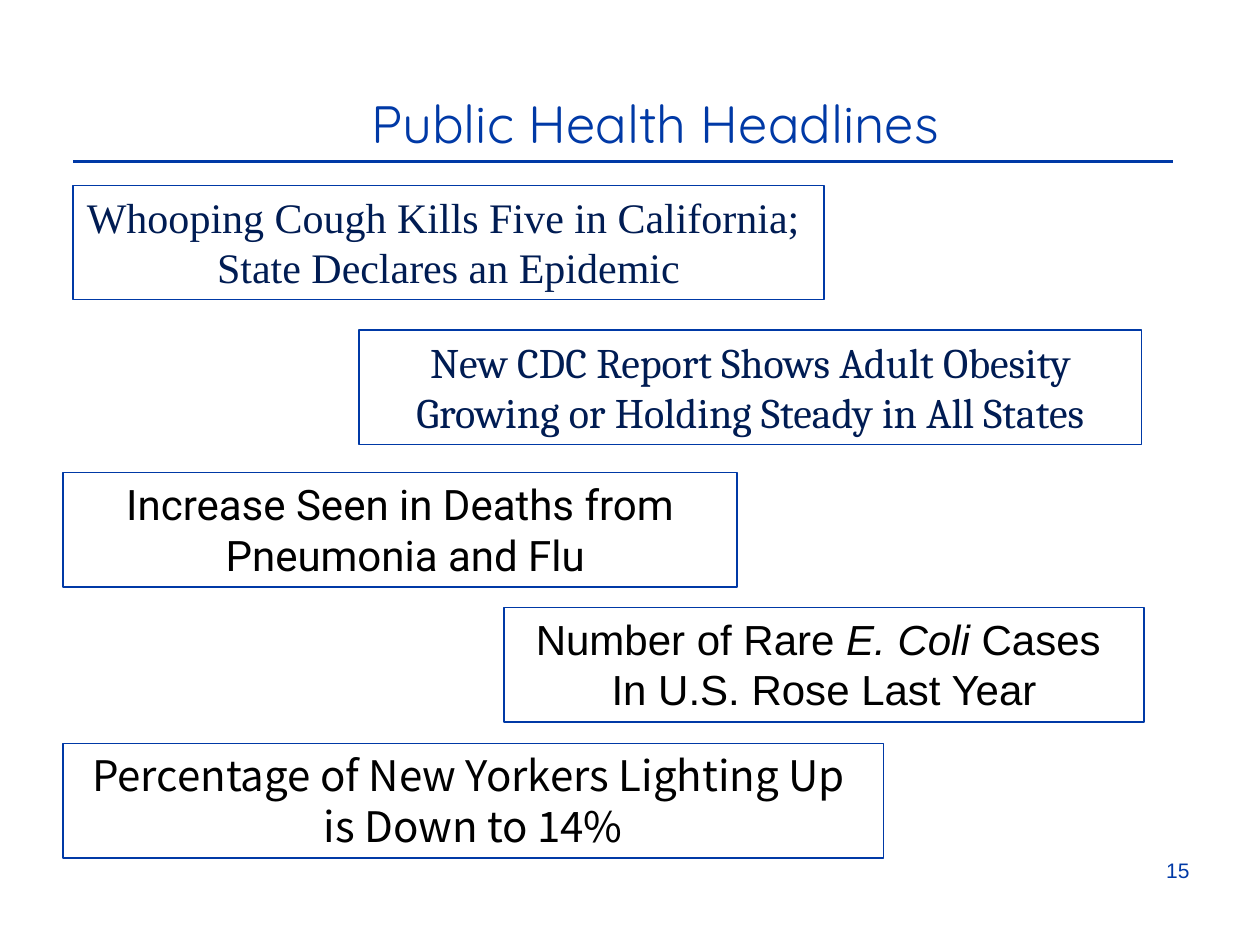
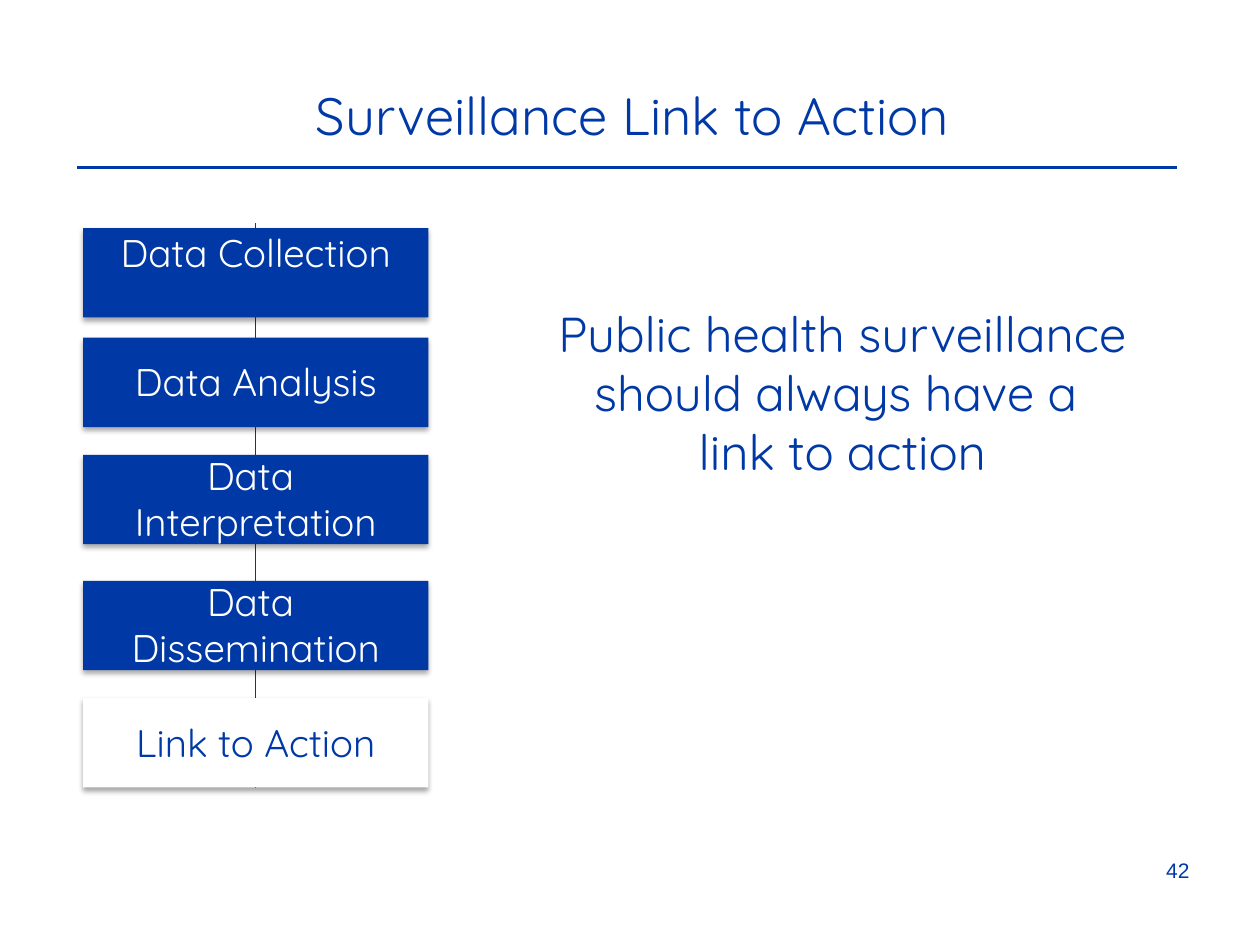
from dataclasses import dataclass

from lxml.etree import SubElement
from pptx import Presentation
from pptx.dml.color import RGBColor
from pptx.enum.shapes import MSO_CONNECTOR, MSO_SHAPE
from pptx.enum.text import MSO_ANCHOR, MSO_AUTO_SIZE, PP_ALIGN
from pptx.oxml.ns import qn
from pptx.util import Emu, Pt

PX = 9144  # 100 px to the inch
BLUE, NAVY, BLACK, WHITE = "0039A6", "001C53", "000000", "FFFFFF"
AXIS_BLUE = "0036A6"
TITLE_FONT, PAGE_FONT = "Quicksand", "Arial"


@dataclass(frozen=True)
class Box:
    left: int
    top: int
    width: int
    height: int

    def emu(self) -> list[Emu]:
        return [Emu(v * PX) for v in (self.left, self.top, self.width, self.height)]


@dataclass(frozen=True)
class Style:
    font: str
    size: int
    color: str
    align: PP_ALIGN = PP_ALIGN.CENTER


@dataclass(frozen=True)
class Headline:
    box: Box
    lines: list[str]  # words between underscores are italic
    font: str
    color: str = BLACK


@dataclass(frozen=True)
class Step:
    top: int
    text_top: int
    text_height: int
    lines: list[str]
    fill: str = BLUE
    color: str = WHITE


HEADLINES = [
    Headline(Box(58, 147, 596, 91),
             ["Whooping Cough Kills Five in California; ", "State Declares an Epidemic"],
             "Times New Roman", NAVY),
    Headline(Box(400, 482, 508, 91),
             ["Number of Rare _E. Coli _Cases ", "In U.S. Rose Last Year"], "Arial"),
    Headline(Box(50, 375, 535, 91),
             ["Increase Seen in Deaths from", " Pneumonia and Flu"], "Roboto"),
    Headline(Box(50, 590, 651, 91),
             ["Percentage of New Yorkers Lighting Up ", "is Down to 14%"], "Noto Sans CJK KR"),
    Headline(Box(285, 262, 621, 91),
             ["New CDC Report Shows Adult Obesity Growing or Holding Steady in All States"],
             "Cambria", NAVY),
]

ONE_LINE, TWO_LINES = 47, 84
STEPS = [
    Step(181, 177, TWO_LINES, ["Data Collection"]),
    Step(268, 279, ONE_LINE, ["Data Analysis"]),
    Step(361, 354, TWO_LINES, ["Data ", "Interpretation"]),
    Step(461, 454, TWO_LINES, ["Data ", "Dissemination"]),
    Step(554, 566, ONE_LINE, ["Link to Action"], WHITE, BLUE),
]
STEP_LEFT, STEP_WIDTH, STEP_HEIGHT, STEP_INSET = 66, 274, 71, 10


def rgb(value: str) -> RGBColor:
    return RGBColor.from_string(value)


def write(sp, lines: list[str], style: Style, wrap: bool = True, indent: int = 0) -> None:
    tf = sp.text_frame
    tf.word_wrap = wrap
    tf.auto_size = MSO_AUTO_SIZE.NONE if wrap else MSO_AUTO_SIZE.SHAPE_TO_FIT_TEXT
    tf.vertical_anchor = MSO_ANCHOR.TOP
    for i, line in enumerate(lines):
        p = tf.paragraphs[0] if i == 0 else tf.add_paragraph()
        p.alignment = style.align
        if indent:
            p._p.get_or_add_pPr().set("marL", str(indent * PX))
        first, *rest = line.split("_")
        p.text = first
        for part in rest:
            p.add_run().text = part
        for j, r in enumerate(p.runs):
            r.font.name = style.font
            r.font.size = Pt(style.size)
            r.font.color.rgb = rgb(style.color)
            r.font.italic = j % 2 == 1


def add_text(s, box: Box, lines: list[str], style: Style, wrap: bool = True, indent: int = 0):
    sp = s.shapes.add_textbox(*box.emu())
    write(sp, lines, style, wrap, indent)
    return sp


def add_rect(s, box: Box, fill: str, line: str | None = None):
    sp = s.shapes.add_shape(MSO_SHAPE.RECTANGLE, *box.emu())
    sp.shadow.inherit = False
    sp.fill.solid()
    sp.fill.fore_color.rgb = rgb(fill)
    if line:
        sp.line.color.rgb = rgb(line)
        sp.line.width = Pt(0.75)
    else:
        sp.line.fill.background()
    return sp


def add_drop_shadow(sp) -> None:
    effects = sp._element.spPr.find(qn("a:effectLst"))
    shadow = SubElement(effects, qn("a:outerShdw"), blurRad="40000", dist="23000",
                        dir="5400000", rotWithShape="0")
    color = SubElement(shadow, qn("a:srgbClr"), val=BLACK)
    SubElement(color, qn("a:alpha"), val="35000")


def add_line(s, x1: int, y1: int, x2: int, y2: int, color: str, width: float):
    ends = [Emu(v * PX) for v in (x1, y1, x2, y2)]
    cxn = s.shapes.add_connector(MSO_CONNECTOR.STRAIGHT, *ends)
    cxn.line.color.rgb = rgb(color)
    cxn.line.width = Pt(width)
    SubElement(cxn._element.spPr, qn("a:effectLst"))
    return cxn


def add_slide(prs, title: str, title_box: Box, indent: int, rule: tuple[int, int], page: int):
    """Blank slide with the shared title, rule and page number."""
    s = prs.slides.add_slide(prs.slide_layouts[6])
    left, top = rule
    add_line(s, left, top, left + 873, top, BLUE, 2)
    add_text(s, title_box, [title], Style(TITLE_FONT, 30, BLUE), wrap=False, indent=indent)
    add_text(s, Box(721, 676, 233, 52), [str(page)],
             Style(PAGE_FONT, 12, BLUE, PP_ALIGN.RIGHT))
    return s


def build_headlines(prs) -> None:
    s = add_slide(prs, "Public Health Headlines", Box(220, 67, 550, 61), 50, (58, 128), 15)
    for h in HEADLINES:
        sp = add_rect(s, h.box, WHITE, BLUE)
        write(sp, h.lines, Style(h.font, 24, h.color))


def build_link_to_action(prs) -> None:
    s = add_slide(prs, "Surveillance Link to Action", Box(216, 61, 562, 61), 10, (61, 133), 42)
    add_text(s, Box(403, 236, 531, 151),
             ["Public health surveillance should always have a ", "link to action"],
             Style(TITLE_FONT, 28, BLUE))

    # Chain of steps on a line that runs behind them
    middle = STEP_LEFT + STEP_WIDTH // 2
    chain = add_line(s, middle, 177, middle, 625, AXIS_BLUE, 0.75)
    for step in STEPS:
        sp = add_rect(s, Box(STEP_LEFT, step.top, STEP_WIDTH, STEP_HEIGHT), step.fill)
        add_drop_shadow(sp)
        add_text(s, Box(STEP_LEFT + STEP_INSET, step.text_top,
                        STEP_WIDTH - 2 * STEP_INSET, step.text_height),
                 step.lines, Style(TITLE_FONT, 22, step.color))
    chain.end_connect(sp, 2)


def main() -> None:
    prs = Presentation()
    prs.slide_width, prs.slide_height = Emu(1000 * PX), Emu(750 * PX)
    build_headlines(prs)
    build_link_to_action(prs)
    prs.save("out.pptx")


if __name__ == "__main__":
    main()
